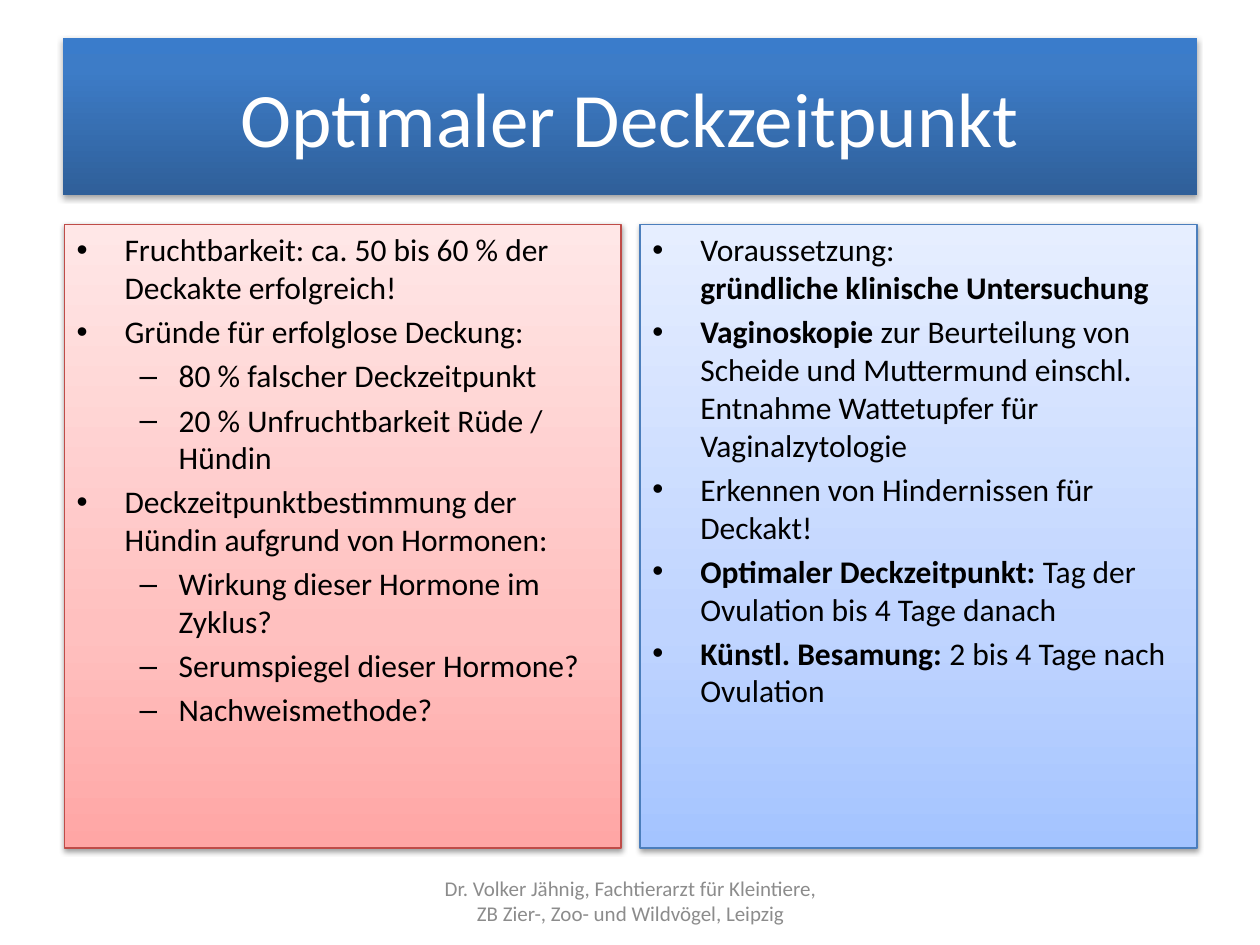
import pptx
import pptx.dml.color
import pptx.enum.shapes
import pptx.enum.text
import pptx.oxml
import pptx.oxml.ns
import pptx.util
from lxml import etree

Inches, Pt = pptx.util.Inches, pptx.util.Pt
RGBColor = pptx.dml.color.RGBColor
ALIGN = pptx.enum.text.PP_ALIGN
ANCHOR = pptx.enum.text.MSO_ANCHOR
qn = pptx.oxml.ns.qn

WIDTH, HEIGHT = 10, 7.5
MARGIN = 0.51
COLUMN_WIDTH, COLUMN_GAP = 4.42, 0.15
COLUMN_TOP, COLUMN_HEIGHT = 1.78, 4.95

BLACK = RGBColor(0x00, 0x00, 0x00)
WHITE = RGBColor(0xFF, 0xFF, 0xFF)
GRAY = RGBColor(0x8C, 0x8C, 0x8C)
RED_EDGE = RGBColor(0xBF, 0x4C, 0x48)
BLUE_EDGE = RGBColor(0x4B, 0x7E, 0xBC)
TITLE_STOPS = [(0, RGBColor(0x2F, 0x5F, 0x99)), (80, RGBColor(0x3D, 0x7C, 0xC7)),
               (100, RGBColor(0x3A, 0x7C, 0xCB))]
RED_STOPS = [(0, RGBColor(0xFF, 0xA6, 0xA5)), (35, RGBColor(0xFF, 0xC0, 0xBF)),
             (100, RGBColor(0xFF, 0xE7, 0xE7))]
BLUE_STOPS = [(0, RGBColor(0xA4, 0xC4, 0xFF)), (35, RGBColor(0xBF, 0xD4, 0xFF)),
              (100, RGBColor(0xE6, 0xEE, 0xFF))]

CENTERED = {"alignment": ALIGN.CENTER}
LISTED = {"alignment": ALIGN.LEFT, "space_before": Pt(3.6)}
MIDDLE_FRAME = {"word_wrap": True, "vertical_anchor": ANCHOR.MIDDLE}
TOP_FRAME = {"word_wrap": True, "vertical_anchor": ANCHOR.TOP}
BULLETS = [("•", 0.38, 0.38), ("–", 0.81, 0.31)]

FERTILITY = [
    (0, [("Fruchtbarkeit: ca. 50 bis 60 % der Deckakte erfolgreich!", False)]),
    (0, [("Gründe für erfolglose Deckung:", False)]),
    (1, [("80 % falscher Deckzeitpunkt", False)]),
    (1, [("20 % Unfruchtbarkeit Rüde / Hündin", False)]),
    (0, [("Deckzeitpunktbestimmung der Hündin aufgrund von Hormonen:", False)]),
    (1, [("Wirkung dieser Hormone im Zyklus?", False)]),
    (1, [("Serumspiegel dieser Hormone?", False)]),
    (1, [("Nachweismethode?", False)]),
]
EXAMINATION = [
    (0, [("Voraussetzung:", False), ("\n", False),
         ("gründliche klinische Untersuchung", True)]),
    (0, [("Vaginoskopie", True),
         (" zur Beurteilung von Scheide und Muttermund einschl. "
          "Entnahme Wattetupfer für Vaginalzytologie", False)]),
    (0, [("Erkennen von Hindernissen für Deckakt!", False)]),
    (0, [("Optimaler Deckzeitpunkt: ", True),
         ("Tag der Ovulation bis 4 Tage danach", False)]),
    (0, [("Künstl. Besamung: ", True), ("2 bis 4 Tage nach Ovulation", False)]),
]


def apply(target, values):
    for name, value in values.items():
        setattr(target, name, value)


def shade(panel, stops):
    panel.fill.gradient()
    panel.fill.gradient_angle = 90
    stop_list = panel._element.spPr.find(qn("a:gradFill")).find(qn("a:gsLst"))
    for old_stop in list(stop_list):
        stop_list.remove(old_stop)
    for position, color in stops:
        stop = etree.SubElement(stop_list, qn("a:gs"), pos=str(position * 1000))
        etree.SubElement(stop, qn("a:srgbClr"), val=str(color))


def cast_shadow(panel, opacity, distance):
    panel.shadow.inherit = False
    effects = panel._element.spPr.find(qn("a:effectLst"))
    shadow = etree.SubElement(effects, qn("a:outerShdw"), blurRad=str(Pt(3.1)),
                              dist=str(Pt(distance)), dir="5400000", rotWithShape="0")
    color = etree.SubElement(shadow, qn("a:srgbClr"), val=str(BLACK))
    etree.SubElement(color, qn("a:alpha"), val=str(opacity * 1000))


def add_panel(slide, box, stops, edge, opacity, distance):
    panel = slide.shapes.add_shape(pptx.enum.shapes.MSO_SHAPE.RECTANGLE,
                                   *map(Inches, box))
    shade(panel, stops)
    if edge is None:
        panel.line.fill.background()
    else:
        panel.line.color.rgb = edge
        panel.line.width = Pt(0.75)
    cast_shadow(panel, opacity, distance)
    return panel


def write(paragraph, text, size, color, bold=False):
    run = paragraph.add_run()
    run.text = text
    apply(run.font, {"name": "Calibri", "size": Pt(size), "bold": bold})
    run.font.color.rgb = color


def write_centered(holder, text, size, color):
    apply(holder.text_frame, MIDDLE_FRAME)
    paragraph = holder.text_frame.paragraphs[0]
    apply(paragraph, CENTERED)
    write(paragraph, text, size, color)


def set_bullet(paragraph, level):
    mark, indent, hanging = BULLETS[level]
    paragraph.level = level
    properties = paragraph._p.get_or_add_pPr()
    properties.set("marL", str(Inches(indent)))
    properties.set("indent", str(-Inches(hanging)))
    etree.SubElement(properties, qn("a:buFont"), typeface="Arial")
    etree.SubElement(properties, qn("a:buChar"), char=mark)


def write_list(panel, items):
    frame = panel.text_frame
    apply(frame, TOP_FRAME)
    for index, (level, parts) in enumerate(items):
        paragraph = frame.add_paragraph() if index else frame.paragraphs[0]
        apply(paragraph, LISTED)
        set_bullet(paragraph, level)
        for text, bold in parts:
            if text == "\n":
                paragraph.add_line_break()
            else:
                write(paragraph, text, 18, BLACK, bold)


def add_column(slide, column, stops, edge, items):
    left = MARGIN + column * (COLUMN_WIDTH + COLUMN_GAP)
    box = (left, COLUMN_TOP, COLUMN_WIDTH, COLUMN_HEIGHT)
    write_list(add_panel(slide, box, stops, edge, 38, 1.6), items)


def main():
    deck = pptx.Presentation()
    apply(deck, {"slide_width": Inches(WIDTH), "slide_height": Inches(HEIGHT)})
    slide = deck.slides.add_slide(deck.slide_layouts[6])

    title_box = (WIDTH * 0.05, HEIGHT * 0.04, WIDTH * 0.9, HEIGHT / 6)
    title = add_panel(slide, title_box, TITLE_STOPS, None, 35, 1.8)
    write_centered(title, "Optimaler Deckzeitpunkt", 44, WHITE)

    add_column(slide, 0, RED_STOPS, RED_EDGE, FERTILITY)
    add_column(slide, 1, BLUE_STOPS, BLUE_EDGE, EXAMINATION)

    footer = slide.shapes.add_textbox(*map(Inches, (3.42, 6.95, 3.17, 0.4)))
    write_centered(footer, "Dr. Volker Jähnig, Fachtierarzt für Kleintiere, "
                   "ZB Zier-, Zoo- und Wildvögel, Leipzig", 12, GRAY)
    deck.save("out.pptx")


if __name__ == "__main__":
    main()
